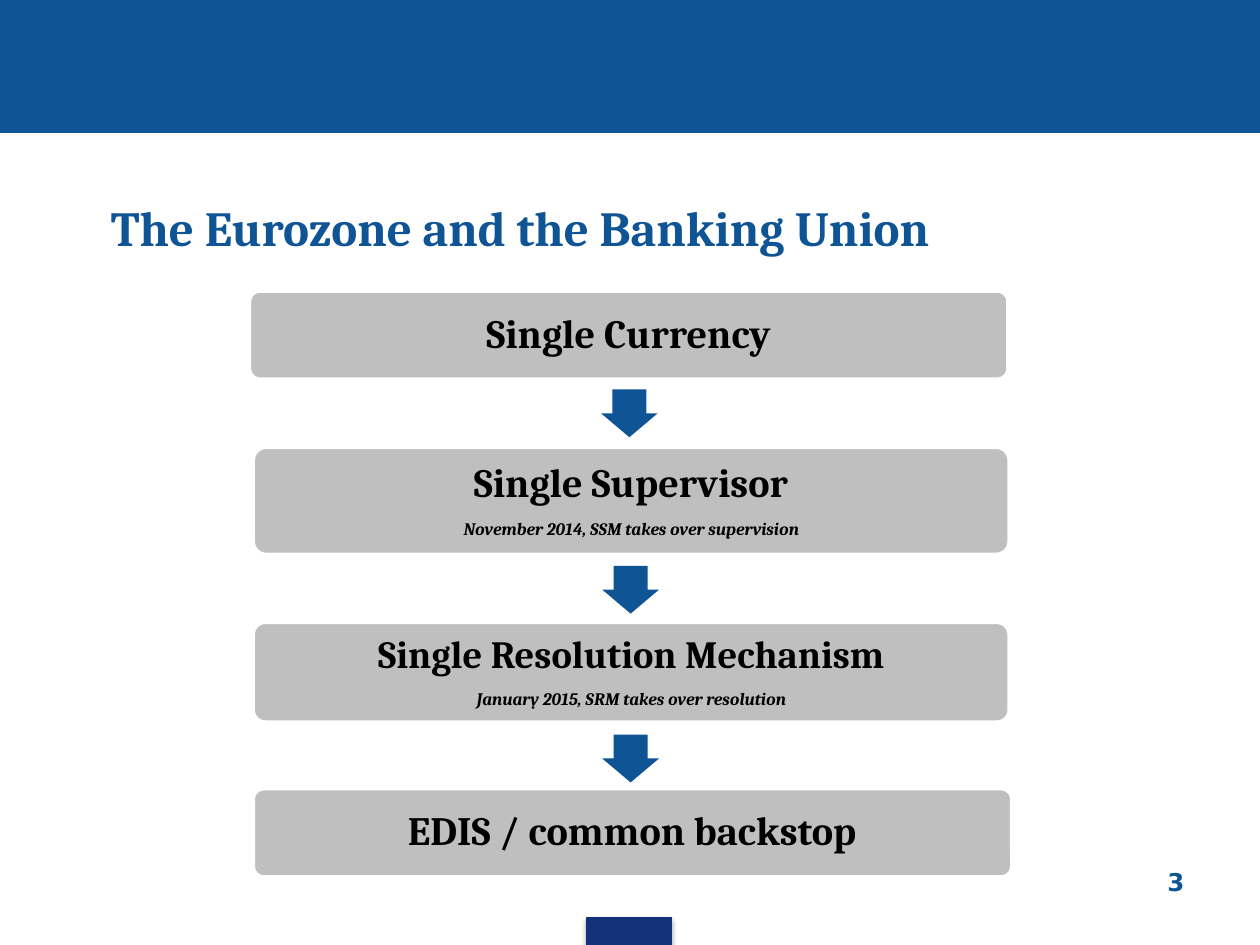
from pptx import Presentation
from pptx.dml.color import RGBColor
from pptx.enum.shapes import MSO_SHAPE
from pptx.enum.text import MSO_ANCHOR, PP_ALIGN
from pptx.util import Inches, Pt

RECTANGLE = MSO_SHAPE.RECTANGLE
ROUNDED = MSO_SHAPE.ROUNDED_RECTANGLE
DOWN_ARROW = MSO_SHAPE.DOWN_ARROW
MIDDLE = MSO_ANCHOR.MIDDLE
CENTER, RIGHT = PP_ALIGN.CENTER, PP_ALIGN.RIGHT

BLUE = RGBColor(0x0F, 0x54, 0x94)
NAVY = RGBColor(0x13, 0x31, 0x76)
GREY = RGBColor(0xBF, 0xBF, 0xBF)
WHITE = RGBColor(0xFF, 0xFF, 0xFF)
BLACK = RGBColor(0x00, 0x00, 0x00)

presentation = Presentation()
presentation.slide_width = Inches(10)
presentation.slide_height = Inches(7.5)
COLUMN = presentation.slide_width / 100
ROW = presentation.slide_height / 75
slide = presentation.slides.add_slide(presentation.slide_layouts[6])


def grid(left, top, width, height):
    """Turn grid columns and rows into slide lengths."""
    return (round(left * COLUMN), round(top * ROW),
            round(width * COLUMN), round(height * ROW))


def style_font(paragraph, size, color, name="Cambria", italic=False):
    font = paragraph.runs[0].font
    font.name = name
    font.size = Pt(size)
    font.bold = True
    font.italic = italic
    font.color.rgb = color


# Header band and footer tab; the tab keeps the theme's soft shadow
for place, color, has_shadow in [
    ((0, 0, 100, 10.5), BLUE, False),
    ((46.6, 72.8, 6.7, 2.2), NAVY, True),
]:
    bar = slide.shapes.add_shape(RECTANGLE, *grid(*place))
    bar.fill.solid()
    bar.fill.fore_color.rgb = color
    bar.line.color.rgb = color
    bar.line.width = Pt(0.75)
    if not has_shadow:
        bar.shadow.inherit = False

# Title
title = slide.shapes.add_textbox(*grid(3.9, 12.9, 90, 10.2))
title_frame = title.text_frame
title_frame.word_wrap = True
title_frame.vertical_anchor = MIDDLE
title_frame.margin_left = round(4.9 * COLUMN)
title_frame.text = "The Eurozone and the Banking Union"
style_font(title_frame.paragraphs[0], 28, BLUE)

# Page number
number = slide.shapes.add_textbox(*grid(71.7, 68.3, 23.3, 5.2))
number_frame = number.text_frame
number_frame.word_wrap = True
number_frame.text = "3"
number_frame.paragraphs[0].alignment = RIGHT
style_font(number_frame.paragraphs[0], 14, BLUE, "DejaVu Sans")

# Steps: left, top, width, height, heading size, lines
steps = [
    (19.8, 23.1, 60.2, 7, 23, ["Single Currency"]),
    (20.1, 35.5, 60, 8.5, 23,
     ["Single Supervisor", "November 2014, SSM takes over supervision"]),
    (20.1, 49.4, 60, 7.9, 22,
     ["Single Resolution Mechanism", "January 2015, SRM takes over resolution"]),
    (20.1, 62.6, 60.2, 7, 23, ["EDIS / common backstop"]),
]
for left, top, width, height, heading_size, lines in steps:
    box = slide.shapes.add_shape(ROUNDED, *grid(left, top, width, height))
    box.shadow.inherit = False
    box.adjustments[0] = 0.12
    box.fill.solid()
    box.fill.fore_color.rgb = GREY
    box.line.color.rgb = WHITE
    box.line.width = Pt(2)
    frame = box.text_frame
    frame.word_wrap = True
    frame.vertical_anchor = MIDDLE
    frame.margin_left = frame.margin_right = round(1.3 * COLUMN)
    frame.margin_top = frame.margin_bottom = round(1.3 * ROW)
    frame.text = "\n".join(lines)
    for index, paragraph in enumerate(frame.paragraphs):
        is_note = index > 0
        size = 10 if is_note else heading_size
        paragraph.alignment = CENTER
        paragraph.line_spacing = 0.9
        paragraph.space_after = Pt(0.35 * size)
        style_font(paragraph, size, BLACK, italic=is_note)

# Arrows between the steps
for left, top in [(47.7, 30.9), (47.8, 44.9), (47.8, 58.3)]:
    arrow = slide.shapes.add_shape(DOWN_ARROW, *grid(left, top, 4.5, 3.8))
    arrow.shadow.inherit = False
    arrow.adjustments[0] = 0.6
    arrow.adjustments[1] = 0.5
    arrow.fill.solid()
    arrow.fill.fore_color.rgb = BLUE
    arrow.line.fill.background()

presentation.save("out.pptx")
